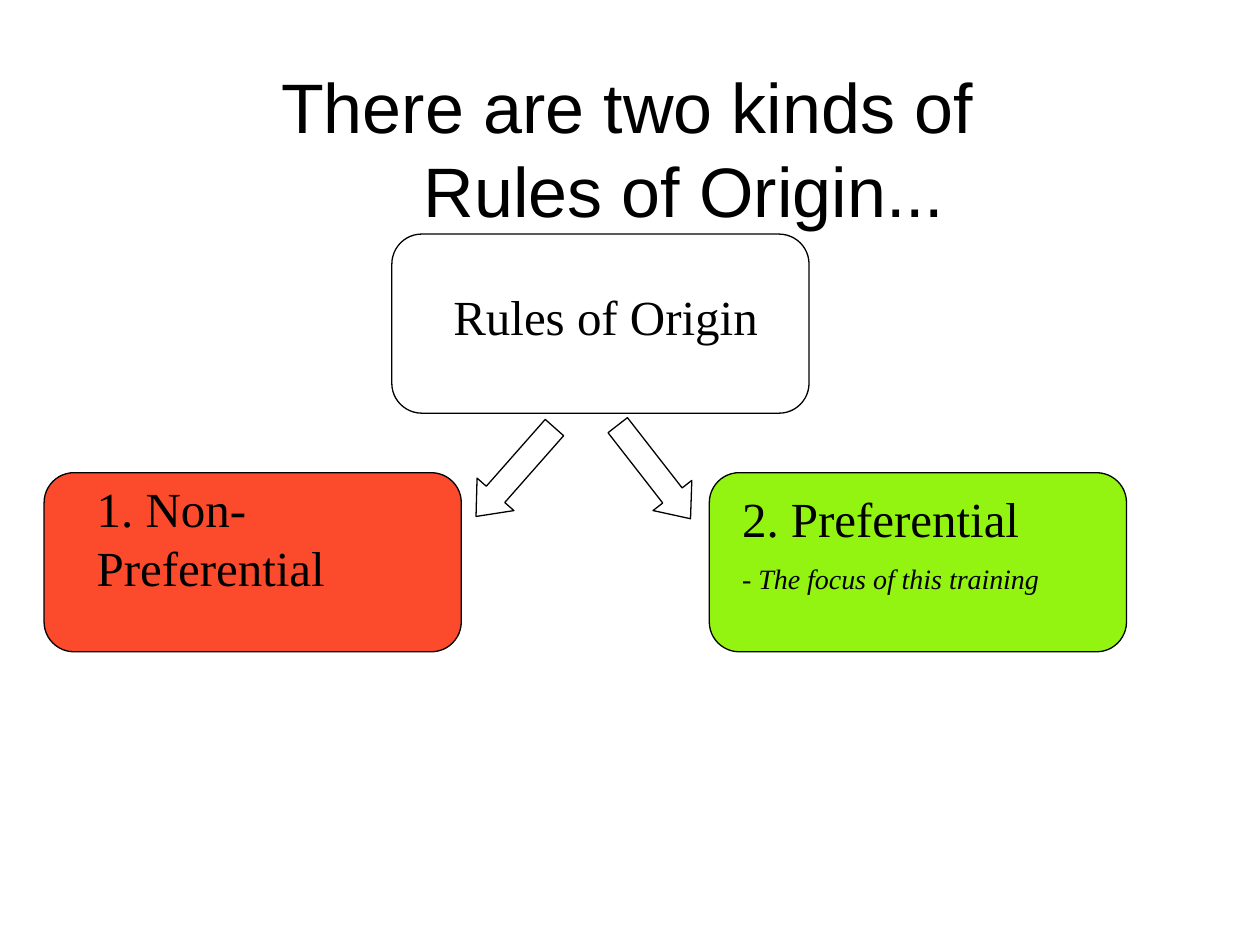
"""Build a slide that splits Rules of Origin into two kinds."""
import pptx
import pptx.util
import pptx.dml.color
import pptx.enum.shapes
import pptx.enum.text
import lxml.etree

Cm = pptx.util.Cm
Pt = pptx.util.Pt
SHAPES = pptx.enum.shapes.MSO_SHAPE


def color(value):
    return pptx.dml.color.RGBColor.from_string(value)


def add_span(para, text, size, font, italic=None):
    span = para.add_run()
    span.text = text
    span.font.size = Pt(size)
    span.font.name = font
    span.font.italic = italic
    span.font.color.rgb = color("000000")


deck = pptx.Presentation()
deck.slide_width = Cm(25.4)
deck.slide_height = Cm(19.05)
page = deck.slides.add_slide(deck.slide_layouts[6])

title = page.shapes.add_textbox(Cm(1.22), Cm(1.42), Cm(23.24), Cm(3.12))
title.text_frame.word_wrap = True
title.text_frame.vertical_anchor = pptx.enum.text.MSO_ANCHOR.MIDDLE
para = title.text_frame.paragraphs[0]
para.alignment = pptx.enum.text.PP_ALIGN.CENTER
properties = para._p.get_or_add_pPr()
properties.set("marL", str(Cm(1.9)))
properties.set("indent", str(-Cm(1.9)))
add_span(para, "There are two kinds of ", 40, "Arial")
para.add_line_break()
add_span(para, "Rules of Origin...", 40, "Arial")

cards = [
    (7.9, 4.72, None, (8.89, 5.66, 6.81, 1.45), [("Rules of Origin", 28, None)]),
    (0.89, 9.53, "FC4A2C", (1.7, 9.53, 6.81, 2.62), [("1. Non-Preferential", 28, None)]),
    (14.3, 9.53, "92F410", (14.71, 9.73, 7.59, 2.49),
     [("2. Preferential", 28, None), ("- The focus of this training", 16, True)]),
]
outlined = []
for left, top, fill, place, lines in cards:
    card = page.shapes.add_shape(SHAPES.ROUNDED_RECTANGLE, Cm(left), Cm(top), Cm(8.41), Cm(3.61))
    card.adjustments[0] = 0.167
    outlined.append((card, fill))

    box = page.shapes.add_textbox(*[Cm(length) for length in place])
    frame = box.text_frame
    frame.word_wrap = True
    frame.auto_size = pptx.enum.text.MSO_AUTO_SIZE.SHAPE_TO_FIT_TEXT
    for index, (text, size, italic) in enumerate(lines):
        para = frame.add_paragraph() if index else frame.paragraphs[0]
        para.space_before = Pt(0)
        spacing = para._p.pPr.find(pptx.oxml.ns.qn("a:spcBef"))
        spacing.remove(spacing[0])
        lxml.etree.SubElement(spacing, pptx.oxml.ns.qn("a:spcPct")).set("val", "50000")
        add_span(para, text, size, "Times New Roman", italic)

for left, angle in [(9.19, 131.4), (11.99, 52.1)]:
    arrow = page.shapes.add_shape(SHAPES.RIGHT_ARROW, Cm(left), Cm(9.02), Cm(2.39), Cm(0.99))
    arrow.adjustments[1] = 0.599
    arrow.rotation = angle
    outlined.append((arrow, None))

for shape, fill in outlined:
    shape.shadow.inherit = False
    shape.line.color.rgb = color("000000")
    shape.line.width = Pt(0.75)
    if fill:
        shape.fill.solid()
        shape.fill.fore_color.rgb = color(fill)
    else:
        shape.fill.background()

deck.save("out.pptx")
